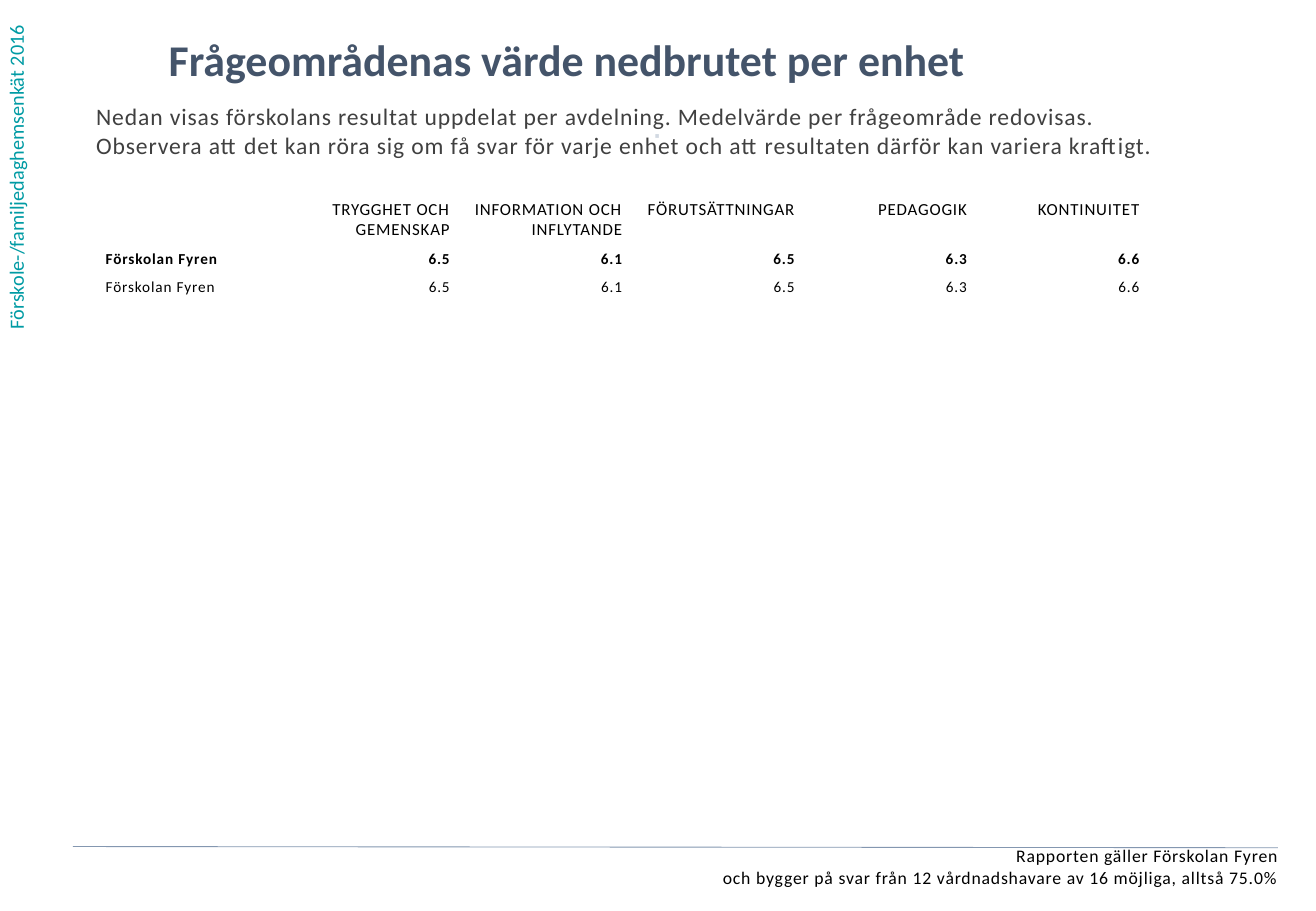
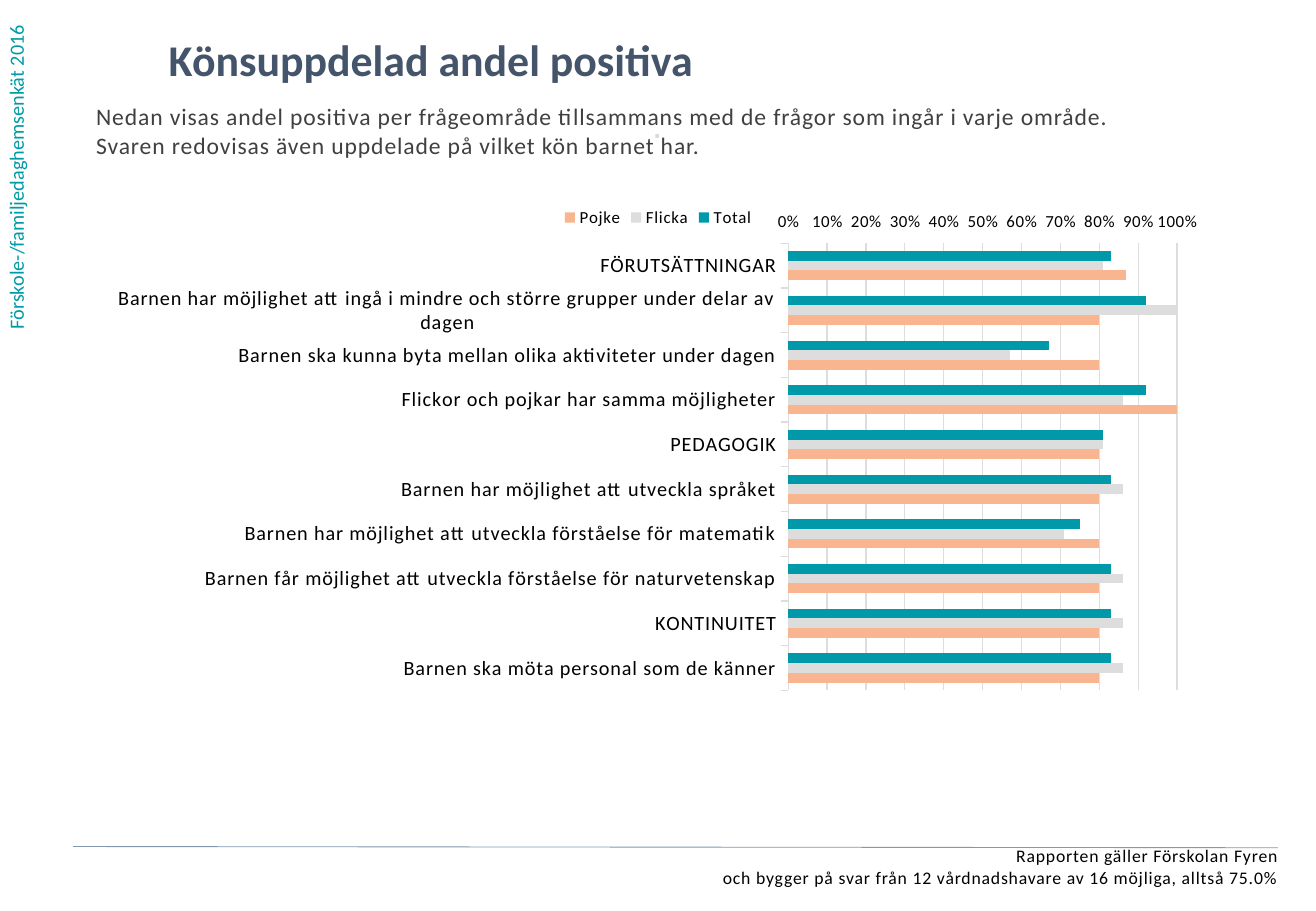
from lxml.etree import SubElement
from pptx import Presentation
from pptx.chart.data import CategoryChartData
from pptx.dml.color import RGBColor
from pptx.enum.chart import XL_AXIS_CROSSES as Crosses, XL_CHART_TYPE as ChartType
from pptx.enum.chart import XL_LEGEND_POSITION as LegendPos, XL_TICK_MARK as Tick
from pptx.enum.shapes import MSO_CONNECTOR as Connector
from pptx.enum.text import MSO_ANCHOR as Anchor, PP_ALIGN as Align
from pptx.oxml import parse_xml
from pptx.oxml.ns import nsdecls, qn
from pptx.util import Pt

FONT = "Calibri"
COLORS = {
    "label": "009BA4", "title": "44546A", "intro": "404040", "text": "000000",
    "dot": "D2D9E2", "rule": "8497B0", "white": "FFFFFF", "grid": "DDDDDD",
    "total": "0099AA", "girl": "DDDDDD", "boy": "F9B590",
}
SPACING = 0.5

LABEL_BOX = (-1.4, 0, 28.8, 202.3)
TITLE_BOX = (100, 19.4, 600, 41)
INTRO_BOX = (57, 60.5, 681, 73)
DOT_BOX = (278.6, 73.4, 222, 28)
FOOTER_BOX = (8.6, 501, 749, 31)
TABLE_BOX = (57, 115.2, 666, 63.2)
CHART_BOX = (57, 115.2, 666, 319)

LABEL = "Förskole-/familjedaghemsenkät 2016"
FOOTER = ("Rapporten gäller Förskolan Fyren\n"
          "och bygger på svar från 12 vårdnadshavare av 16 möjliga, alltså 75.0%")

UNITS = {
    "title": "Frågeområdenas värde nedbrutet per enhet",
    "intro": "Nedan visas förskolans resultat uppdelat per avdelning. "
             "Medelvärde per frågeområde redovisas.\n"
             "Observera att det kan röra sig om få svar för varje enhet "
             "och att resultaten därför kan variera kraftigt.",
    "rows": [
        ["", "TRYGGHET OCH GEMENSKAP", "INFORMATION OCH INFLYTANDE",
         "FÖRUTSÄTTNINGAR", "PEDAGOGIK", "KONTINUITET", ""],
        ["Förskolan Fyren", "6.5", "6.1", "6.5", "6.3", "6.6", ""],
        ["Förskolan Fyren", "6.5", "6.1", "6.5", "6.3", "6.6", ""],
    ],
}
GENDER = {
    "title": "Könsuppdelad andel positiva",
    "intro": "Nedan visas andel positiva per frågeområde tillsammans med "
             "de frågor som ingår i varje område.\n"
             "Svaren redovisas även uppdelade på vilket kön barnet har.",
    "cats": [
        "FÖRUTSÄTTNINGAR",
        "Barnen har möjlighet att ingå i mindre och större grupper under delar av dagen",
        "Barnen ska kunna byta mellan olika aktiviteter under dagen",
        "Flickor och pojkar har samma möjligheter",
        "PEDAGOGIK",
        "Barnen har möjlighet att utveckla språket",
        "Barnen har möjlighet att utveckla förståelse för matematik",
        "Barnen får möjlighet att utveckla förståelse för naturvetenskap",
        "KONTINUITET",
        "Barnen ska möta personal som de känner",
    ],
    "series": [
        ("Total", "total", [.83, .92, .67, .92, .81, .83, .75, .83, .83, .83]),
        ("Flicka", "girl", [.81, 1, .57, .86, .81, .86, .71, .86, .86, .86]),
        ("Pojke", "boy", [.87, .8, .8, 1, .8, .8, .8, .8, .8, .8]),
    ],
}


def rgb(name):
    return RGBColor.from_string(COLORS[name])


def points(box):
    return [Pt(v) for v in box]


def write(tf, text, size, color="text", bold=False, align=Align.LEFT, spacing=SPACING):
    """Fill a text frame, one paragraph for each line of text."""
    tf.word_wrap = True
    for i, line in enumerate(text.split("\n")):
        p = tf.add_paragraph() if i else tf.paragraphs[0]
        p.alignment = align
        if not line:
            # Keeps an empty cell from growing its row
            SubElement(p._p, qn("a:endParaRPr")).set("sz", str(int(size * 100)))
            continue
        r = p.add_run()
        r.text = line
        r.font.name, r.font.size, r.font.bold = FONT, Pt(size), bold
        r.font.color.rgb = rgb(color)
        if spacing:
            r.font._element.set("spc", str(int(spacing * 100)))


def add_text(s, box, text, size, inset=0, **fmt):
    tf = s.shapes.add_textbox(*points(box)).text_frame
    if not inset:
        tf.margin_left = tf.margin_top = tf.margin_right = tf.margin_bottom = 0
    write(tf, text, size, **fmt)
    return tf


def add_page(prs, content):
    """Blank slide with side label, heading, intro and footer."""
    s = prs.slides.add_slide(prs.slide_layouts[6])
    # Side label, read upwards
    side = add_text(s, LABEL_BOX, LABEL, 12, inset=True, color="label", spacing=0)
    side._txBody.bodyPr.set("vert", "vert270")
    # Heading
    add_text(s, TITLE_BOX, content["title"], 26, color="title", bold=True, spacing=0)
    add_text(s, INTRO_BOX, content["intro"], 14, color="intro")
    add_text(s, DOT_BOX, "⋅", 12, color="dot", bold=True, align=Align.CENTER)
    # Footer with rule
    add_text(s, FOOTER_BOX, FOOTER, 10.5, align=Align.RIGHT)
    rule = s.shapes.add_connector(Connector.STRAIGHT, *points((43.2, 501.8, 757.4, 502.5)))
    rule.line.color.rgb, rule.line.width = rgb("rule"), Pt(0.5)
    SubElement(rule._element.spPr, qn("a:effectLst"))
    return s


def add_unit_table(s, box, rows):
    """Mean per area: a header row, a bold total and one row per unit."""
    table = s.shapes.add_table(len(rows), len(rows[0]), *points(box)).table
    table.first_row = table.horz_banding = False
    for i, col in enumerate(table.columns):
        col.width = Pt(102.2 if i else 113)
    for i, row in enumerate(rows):
        table.rows[i].height = Pt(16.6 if i else 30)
        for j, text in enumerate(row):
            cell = table.cell(i, j)
            cell.fill.solid()
            cell.fill.fore_color.rgb = rgb("white")
            cell.margin_left = cell.margin_right = Pt(5.67)
            cell.margin_top = cell.margin_bottom = Pt(2.83)
            cell.vertical_anchor = Anchor.MIDDLE if i else Anchor.TOP
            write(cell.text_frame, text, 9 if i else 10, bold=i == 1,
                  align=Align.RIGHT if j else Align.LEFT)


def set_font(font, size):
    font.name, font.size, font.bold = FONT, Pt(size), False
    font.color.rgb = rgb("text")
    font._element.set("spc", str(int(SPACING * 100)))


def set_plot_area(chart, x, y, w, h):
    """Fix the inner plot area, in fractions of the chart."""
    plot_area = chart._chartSpace.chart.plotArea
    for old in plot_area.findall(qn("c:layout")):
        plot_area.remove(old)
    sizes = "".join(f'<c:{k} val="{v}"/>' for k, v in zip("xywh", (x, y, w, h)))
    plot_area.insert(0, parse_xml(
        f'<c:layout {nsdecls("c")}><c:manualLayout><c:layoutTarget val="inner"/>'
        f'<c:xMode val="edge"/><c:yMode val="edge"/>{sizes}</c:manualLayout></c:layout>'))


def add_gender_chart(s, box, cats, series):
    """Share of positive answers for all, girls and boys."""
    data = CategoryChartData(number_format="0%")
    data.categories = cats
    for name, _, values in series:
        data.add_series(name, values)
    chart = s.shapes.add_chart(ChartType.BAR_CLUSTERED, *points(box), data).chart
    chart.has_title = False
    set_font(chart.font, 10)
    set_plot_area(chart, 0.616, 0.091, 0.346, 0.831)
    # Bars
    plot = chart.plots[0]
    plot.gap_width, plot.overlap, plot.vary_by_categories = 162, 0, False
    for bars, (_, color, _) in zip(plot.series, series):
        bars.format.fill.solid()
        bars.format.fill.fore_color.rgb = rgb(color)
    # Legend
    chart.has_legend = True
    chart.legend.position, chart.legend.include_in_layout = LegendPos.TOP, False
    set_font(chart.legend.font, 10)
    # Axes
    cat_axis, val_axis = chart.category_axis, chart.value_axis
    cat_axis.reverse_order = True
    cat_axis.crosses = Crosses.MAXIMUM
    val_axis.minimum_scale, val_axis.maximum_scale, val_axis.major_unit = 0, 1, 0.1
    val_axis.tick_labels.number_format = "0%;0%"
    val_axis.tick_labels.number_format_is_linked = False
    val_axis.has_major_gridlines = True
    for axis, size in ((cat_axis, 12), (val_axis, 10)):
        axis.major_tick_mark = Tick.OUTSIDE
        set_font(axis.tick_labels.font, size)
    for line in (cat_axis.format.line, val_axis.major_gridlines.format.line):
        line.color.rgb, line.width = rgb("grid"), Pt(0.75)
    val_axis.format.line.fill.background()


def main():
    prs = Presentation()
    prs.slide_width, prs.slide_height = Pt(780), Pt(540)
    add_unit_table(add_page(prs, UNITS), TABLE_BOX, UNITS["rows"])
    add_gender_chart(add_page(prs, GENDER), CHART_BOX, GENDER["cats"], GENDER["series"])
    prs.save("out.pptx")


if __name__ == "__main__":
    main()
